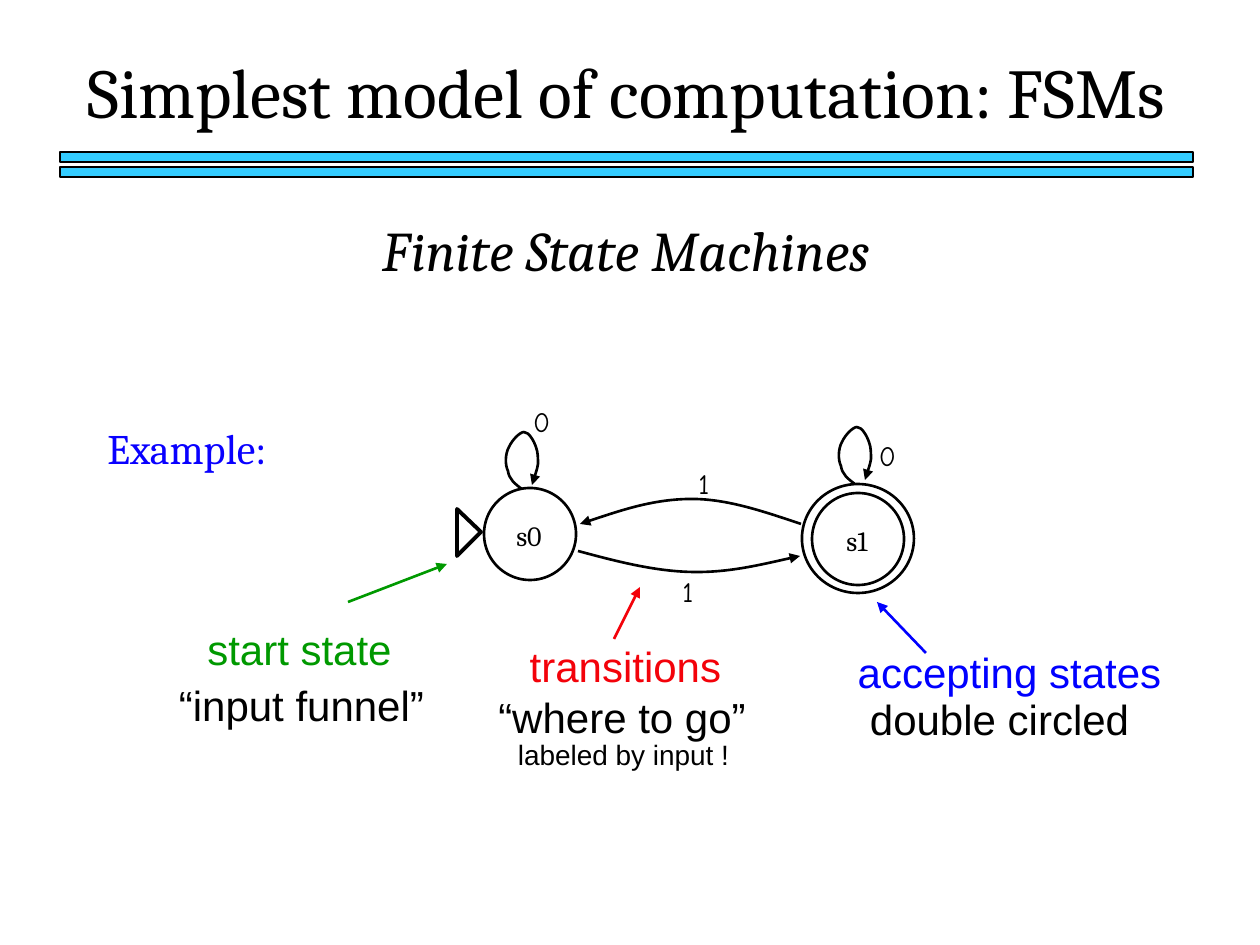
"""Build a slide that explains a two-state finite state machine."""
import pptx
import pptx.dml.color
import pptx.enum.shapes
import pptx.enum.text
import pptx.oxml
import pptx.oxml.ns
import pptx.util
from lxml import etree

PX = 914400 / 126
COLORS = {"black": "000000", "bar": "33CCFF", "green": "009900", "red": "F3020A",
          "blue": "0000FF", "example": "0900FF"}
SERIF, SANS, HAND = "Cambria", "Arial", "Comic Neue"

BARS = [(60, 152, 1133, 10), (60, 167, 1133, 10)]
WRAPPED = [
    ("Simplest model of computation: FSMs", (66, 42, 1120, 97), 40, SERIF, "black"),
    ("Finite State Machines", (268, 209, 716, 81), 32, SERIF, "black"),
    ("Example:", (95, 416, 358, 63), 24, SERIF, "example"),
]
LABELS = [
    ("s0", (503, 512, 52, 47), 16, SERIF, "black"),
    ("s1", (831, 517, 52, 47), 16, SERIF, "black"),
    ("1", (685, 460, 38, 47), 16, HAND, "black"),
    ("0", (520, 398, 43, 47), 16, HAND, "black"),
    ("1", (669, 568, 38, 47), 16, HAND, "black"),
    ("0", (866, 432, 43, 47), 16, HAND, "black"),
    ("start state", (194, 617, 211, 63), 24, SANS, "green"),
    ("“input funnel”", (166, 673, 271, 63), 24, SANS, "black"),
    ("transitions", (517, 634, 217, 63), 24, SANS, "red"),
    ("“where to go”", (485, 685, 274, 63), 24, SANS, "black"),
    ("labeled by input !", (505, 731, 237, 47), 16, SANS, "black"),
    ("accepting states", (845, 640, 329, 63), 24, SANS, "blue"),
    ("double circled", (857, 687, 285, 63), 24, SANS, "black"),
]
CIRCLES = [(484, 488, 92, 92), (812, 493, 92, 92), (802, 484, 112, 109)]
POINTERS = [((348, 602), (447, 564), "green"), ((926, 653), (877, 602), "blue"),
            ((614, 639), (640, 587), "red")]
FUNNEL = [(457, 509), (457, 556), (481, 532)]
LOOP = [(522, 489), (515, 484), (509, 479), (508, 471), (505, 465), (505, 454), (509, 447),
        (512, 440), (520, 432), (524, 432), (529, 432), (534, 441), (536, 447),
        (538, 452), (538, 458), (538, 464), (537, 470), (534, 478), (532, 485)]
LOOP_SHIFTS = [(0, 0), (333, -5)]
TO_S1 = [(578, 551), (615, 561), (653, 571), (690, 572), (727, 573), (764, 564), (800, 556)]
TO_S0 = [(801, 524), (765, 512), (728, 499), (692, 499), (654, 499), (616, 512), (580, 524)]


def emu(*values):
    return [round(v * PX) for v in values]


def rgb(name):
    return pptx.dml.color.RGBColor.from_string(COLORS[name])


def outline(sp, color="black", width=1.5, arrow=False):
    sp.line.color.rgb = rgb(color)
    sp.line.width = pptx.util.Pt(width)
    if arrow:
        ln = sp.line._get_or_add_ln()
        etree.SubElement(ln, pptx.oxml.ns.qn("a:tailEnd"), type="triangle")


def add_shape(s, kind, box, fill=None, width=1.5):
    sp = s.shapes.add_shape(kind, *emu(*box))
    sp.shadow.inherit = False
    if fill:
        sp.fill.solid()
        sp.fill.fore_color.rgb = rgb(fill)
    else:
        sp.fill.background()
    outline(sp, width=width)


def add_text(s, text, box, size, font, color, wrap):
    tf = s.shapes.add_textbox(*emu(*box)).text_frame
    tf.word_wrap = wrap
    tf.auto_size = pptx.enum.text.MSO_AUTO_SIZE.SHAPE_TO_FIT_TEXT
    tf.vertical_anchor = pptx.enum.text.MSO_ANCHOR.MIDDLE
    tf.text = text
    p = tf.paragraphs[0]
    align = pptx.enum.text.PP_ALIGN
    p.alignment = align.LEFT if text == "Example:" else align.CENTER
    r = p.runs[0]
    r.font.size = pptx.util.Pt(size)
    r.font.name = font
    r.font.color.rgb = rgb(color)
    if text == "Finite State Machines":
        r.font.italic = True


def add_path(s, points, close=False):
    fb = s.shapes.build_freeform(*points[0], scale=PX)
    fb.add_line_segments(points[1:], close=close)
    sp = fb.convert_to_shape()
    sp.shadow.inherit = False
    sp.fill.background()
    return sp


def add_curve(s, points):
    sp = add_path(s, points)
    lines = list(sp._element.iter(pptx.oxml.ns.qn("a:lnTo")))
    for i in range(0, len(lines), 3):
        path = lines[i].getparent()
        curve = etree.SubElement(path, pptx.oxml.ns.qn("a:cubicBezTo"))
        for line in lines[i:i + 3]:
            curve.append(line[0])
            path.remove(line)
    outline(sp, arrow=True)


def add_pointer(s, start, end, color):
    sp = s.shapes.add_connector(pptx.enum.shapes.MSO_CONNECTOR.STRAIGHT, *emu(*start, *end))
    outline(sp, color, arrow=True)
    etree.SubElement(sp._element.spPr, pptx.oxml.ns.qn("a:effectLst"))


def main():
    prs = pptx.Presentation()
    prs.slide_width, prs.slide_height = emu(1260, 945)
    s = prs.slides.add_slide(prs.slide_layouts[6])
    kinds = pptx.enum.shapes.MSO_SHAPE
    for box in BARS:
        add_shape(s, kinds.RECTANGLE, box, "bar", 0.75)
    for box in CIRCLES:
        add_shape(s, kinds.OVAL, box)
    outline(add_path(s, FUNNEL, close=True), width=2.25)
    loops = [[(x + dx, y + dy) for x, y in LOOP] for dx, dy in LOOP_SHIFTS]
    for points in [TO_S1, TO_S0, *loops]:
        add_curve(s, points)
    for pointer in POINTERS:
        add_pointer(s, *pointer)
    for item in WRAPPED:
        add_text(s, *item, wrap=True)
    for item in LABELS:
        add_text(s, *item, wrap=False)
    prs.save("out.pptx")


if __name__ == "__main__":
    main()
